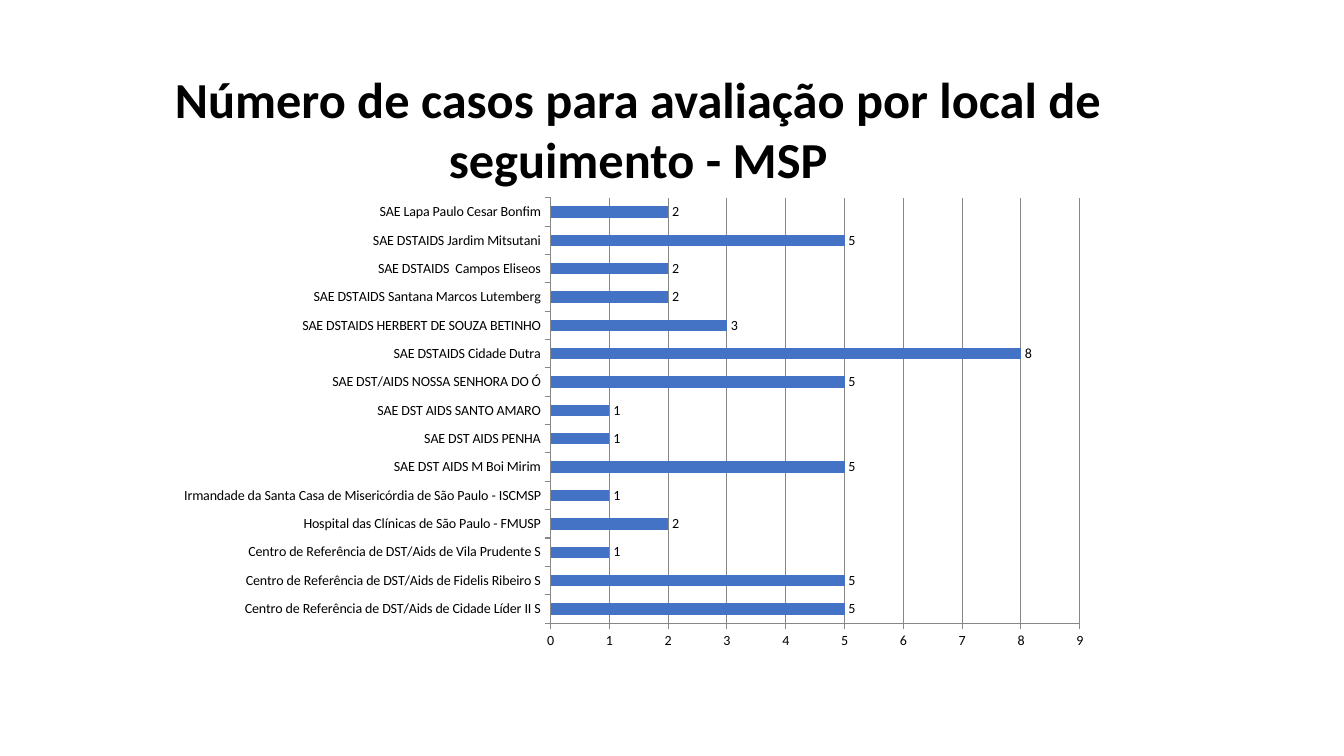
import pptx
import pptx.chart.data
import pptx.dml.color
import pptx.enum.chart
import pptx.enum.text
import pptx.util

EMU_PER_PX = 9144

CASES_BY_SITE = {
    "Centro de Referência de DST/Aids de Cidade Líder II S": 5,
    "Centro de Referência de DST/Aids de Fidelis Ribeiro S": 5,
    "Centro de Referência de DST/Aids de Vila Prudente S": 1,
    "Hospital das Clínicas de São Paulo - FMUSP": 2,
    "Irmandade da Santa Casa de Misericórdia de São Paulo - ISCMSP": 1,
    "SAE DST AIDS M Boi Mirim": 5,
    "SAE DST AIDS PENHA": 1,
    "SAE DST AIDS SANTO AMARO": 1,
    "SAE DST/AIDS NOSSA SENHORA DO Ó": 5,
    "SAE DSTAIDS Cidade Dutra": 8,
    "SAE DSTAIDS HERBERT DE SOUZA BETINHO": 3,
    "SAE DSTAIDS Santana Marcos Lutemberg": 2,
    "SAE DSTAIDS  Campos Eliseos": 2,
    "SAE DSTAIDS Jardim Mitsutani": 5,
    "SAE Lapa Paulo Cesar Bonfim": 2,
}


def px(length):
    return pptx.util.Emu(length * EMU_PER_PX)


def color(hex_code):
    return pptx.dml.color.RGBColor.from_string(hex_code)


class CaseSlide:
    font_name = "Calibri"
    text_color = "000000"
    bar_color = "4472C4"
    line_color = "878787"

    def __init__(self, presentation):
        self.slide = presentation.slides.add_slide(presentation.slide_layouts[5])

    def style_font(self, font, size, bold=False):
        font.name = self.font_name
        font.size = pptx.util.Pt(size)
        font.bold = bold
        font.color.rgb = color(self.text_color)

    def style_line(self, line):
        line.color.rgb = color(self.line_color)
        line.width = pptx.util.Pt(0.75)

    def title(self, text, left, top, width, height):
        heading = self.slide.shapes.title
        heading.left, heading.top = px(left), px(top)
        heading.width, heading.height = px(width), px(height)
        frame = heading.text_frame
        frame.text = text
        frame.word_wrap = True
        frame.auto_size = pptx.enum.text.MSO_AUTO_SIZE.SHAPE_TO_FIT_TEXT
        frame.vertical_anchor = pptx.enum.text.MSO_ANCHOR.MIDDLE
        frame.paragraphs[0].alignment = pptx.enum.text.PP_ALIGN.CENTER
        self.style_font(frame.paragraphs[0].runs[0].font, 36, bold=True)

    def bar_chart(self, values, left, top, width, height):
        cases = pptx.chart.data.CategoryChartData()
        cases.categories = list(values)
        cases.add_series("Series 1", list(values.values()))
        chart = self.slide.shapes.add_chart(
            pptx.enum.chart.XL_CHART_TYPE.BAR_CLUSTERED,
            px(left), px(top), px(width), px(height), cases,
        ).chart
        chart.has_title = False
        chart.has_legend = False
        self.style_font(chart.font, 10)

        for axis in (chart.category_axis, chart.value_axis):
            axis.major_tick_mark = pptx.enum.chart.XL_TICK_MARK.OUTSIDE
            axis.minor_tick_mark = pptx.enum.chart.XL_TICK_MARK.NONE
            self.style_line(axis.format.line)
        chart.category_axis.has_major_gridlines = False
        chart.value_axis.has_major_gridlines = True
        self.style_line(chart.value_axis.major_gridlines.format.line)
        chart.value_axis.minimum_scale = 0
        chart.value_axis.maximum_scale = 9
        chart.value_axis.major_unit = 1

        plot = chart.plots[0]
        plot.gap_width = 150
        plot.vary_by_categories = False
        bars = plot.series[0]
        bars.format.fill.solid()
        bars.format.fill.fore_color.rgb = color(self.bar_color)
        labels = bars.data_labels
        labels.show_value = True
        labels.position = pptx.enum.chart.XL_LABEL_POSITION.OUTSIDE_END
        self.style_font(labels.font, 10)


def main():
    presentation = pptx.Presentation()
    presentation.slide_width, presentation.slide_height = px(1333), px(750)
    case_slide = CaseSlide(presentation)
    case_slide.title(
        "Número de casos para avaliação por local de seguimento - MSP",
        91, 62, 1084, 131,
    )
    case_slide.bar_chart(CASES_BY_SITE, 164, 187, 929, 466)
    presentation.save("out.pptx")


if __name__ == "__main__":
    main()
